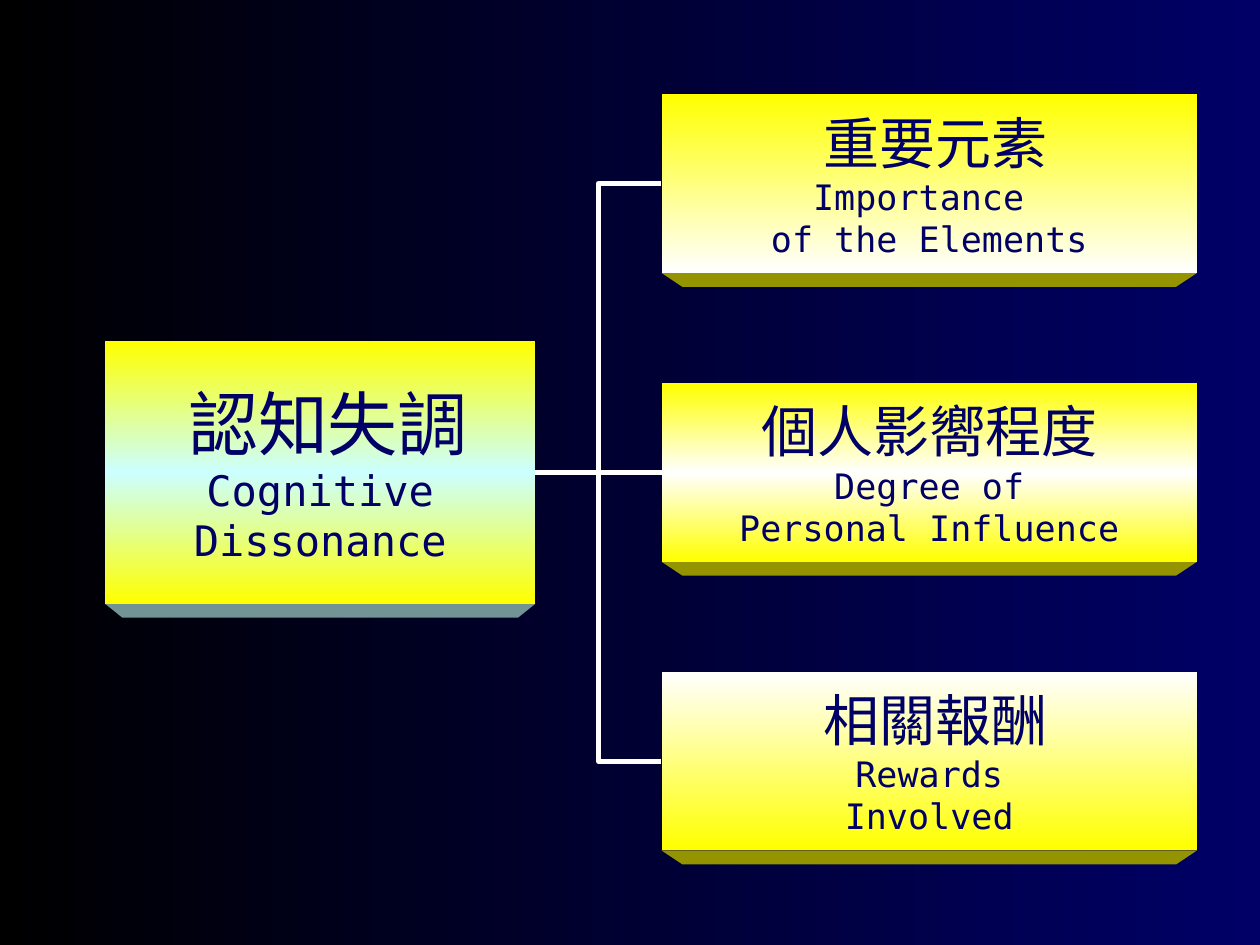
import copy
from dataclasses import dataclass

import pptx
import pptx.dml.color
import pptx.enum.shapes
import pptx.enum.text
import pptx.oxml.ns
import pptx.util

Pt = pptx.util.Pt
RGB = pptx.dml.color.RGBColor.from_string
CONNECTOR = pptx.enum.shapes.MSO_CONNECTOR
qn = pptx.oxml.ns.qn


@dataclass(frozen=True)
class Theme:
    font: str = "DejaVu Sans Mono"
    black: str = "000000"
    navy: str = "000066"
    yellow: str = "FFFF00"
    white: str = "FFFFFF"
    aqua: str = "CCFFFF"
    olive: str = "949400"
    teal: str = "739494"
    root_sizes: tuple = (40, 24)
    branch_sizes: tuple = (32, 20)
    line_width: float = 3


THEME = Theme()
LIP_HEIGHT = 8


def set_values(target, values):
    for name, value in values.items():
        setattr(target, name, value)


def paint_gradient(fill, holder, colors, angle):
    """Spread the colours evenly over a gradient fill that lies inside holder."""
    fill.gradient()
    fill.gradient_angle = angle
    stop_list = next(holder.iter(qn("a:gsLst")))
    for _ in colors[2:]:
        stop_list.append(copy.deepcopy(stop_list[-1]))
    for index, (stop, color) in enumerate(zip(fill.gradient_stops, colors)):
        stop.color.rgb = RGB(color)
        stop.position = index / (len(colors) - 1)


def add_lip(page, left, top, width, inset, color):
    """Draw the bevelled edge under a block."""
    right, bottom = left + width, top + LIP_HEIGHT
    builder = page.shapes.build_freeform(Pt(left), Pt(top))
    corners = [(right, top), (right - inset, bottom), (left + inset, bottom)]
    builder.add_line_segments([(Pt(x), Pt(y)) for x, y in corners])
    lip = builder.convert_to_shape()
    lip.shadow.inherit = False
    lip.fill.solid()
    lip.fill.fore_color.rgb = RGB(color)
    lip.line.fill.background()


def write_lines(box, lines, sizes):
    """Write a Chinese heading and its English lines, centred in the box."""
    frame = box.text_frame
    set_values(frame, {
        "word_wrap": False,
        "vertical_anchor": pptx.enum.text.MSO_ANCHOR.MIDDLE,
    })
    heading_size, body_size = sizes
    for index, line in enumerate(lines):
        para = frame.add_paragraph() if index else frame.paragraphs[0]
        para.alignment = pptx.enum.text.PP_ALIGN.CENTER
        span = para.add_run()
        span.text = line
        set_values(span.font, {
            "name": THEME.font,
            "size": Pt(body_size if index else heading_size),
        })
        span.font.color.rgb = RGB(THEME.navy)


def add_block(page, area, lines, sizes, colors, lip_inset, lip_color):
    left, top, width, height = area
    add_lip(page, left, top + height, width, lip_inset, lip_color)
    box = page.shapes.add_shape(
        pptx.enum.shapes.MSO_SHAPE.RECTANGLE, *map(Pt, area))
    box.shadow.inherit = False
    box.line.fill.background()
    paint_gradient(box.fill, box._element, colors, 270)
    write_lines(box, lines, sizes)
    return box


def add_root(page, area):
    colors = (THEME.yellow, THEME.aqua, THEME.yellow)
    return add_block(page, area, (" 認知失調", "Cognitive", "Dissonance"),
                     THEME.root_sizes, colors, 10, THEME.teal)


def add_branches(page, area):
    """Stack three equal blocks over the height of the area."""
    yellow, white = THEME.yellow, THEME.white
    branches = [
        ((" 重要元素", "Importance ", "of the Elements"), (yellow, white)),
        (("個人影嚮程度", "Degree of", "Personal Influence"),
         (yellow, white, yellow)),
        ((" 相關報酬", "Rewards", "Involved"), (white, yellow)),
    ]
    left, top, width, height = area
    block_height = 102
    step = (height - block_height) / (len(branches) - 1)
    return [
        add_block(page, (left, top + index * step, width, block_height),
                  lines, THEME.branch_sizes, colors, 12, THEME.olive)
        for index, (lines, colors) in enumerate(branches)
    ]


def join(page, root, branch, kind):
    link = page.shapes.add_connector(kind, 0, 0, 0, 0)
    link.begin_connect(root, 3)
    link.end_connect(branch, 1)
    link.line.width = Pt(THEME.line_width)
    link.line.color.rgb = RGB(THEME.white)
    properties = link._element.spPr
    properties.append(properties.makeelement(qn("a:effectLst"), {}))


def main():
    deck = pptx.Presentation()
    set_values(deck, {"slide_width": Pt(720), "slide_height": Pt(540)})
    page = deck.slides.add_slide(deck.slide_layouts[6])
    paint_gradient(page.background.fill, page._element,
                   (THEME.black, THEME.navy), 0)

    root = add_root(page, (60, 195, 246, 150))
    upper, middle, lower = add_branches(page, (378, 54, 306, 432))
    for branch, kind in ((upper, CONNECTOR.ELBOW), (lower, CONNECTOR.ELBOW),
                         (middle, CONNECTOR.STRAIGHT)):
        join(page, root, branch, kind)
    deck.save("out.pptx")


if __name__ == "__main__":
    main()
